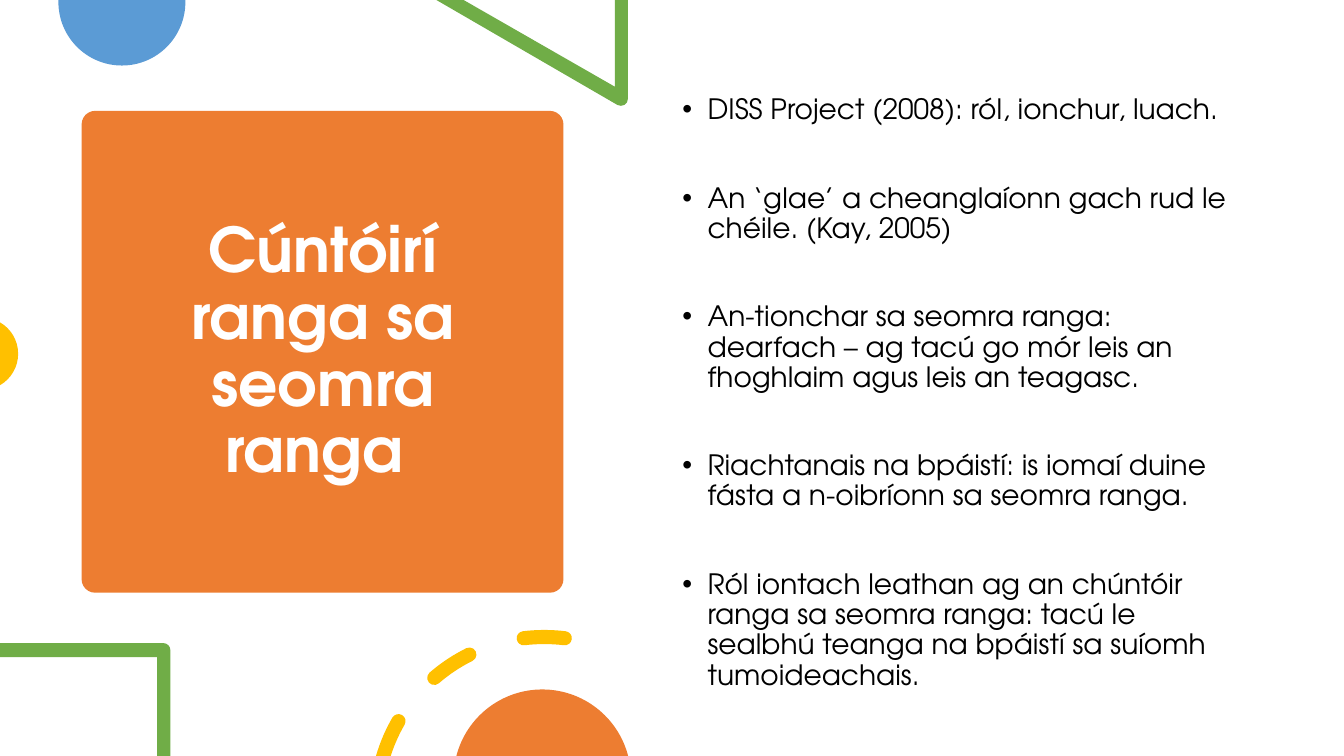
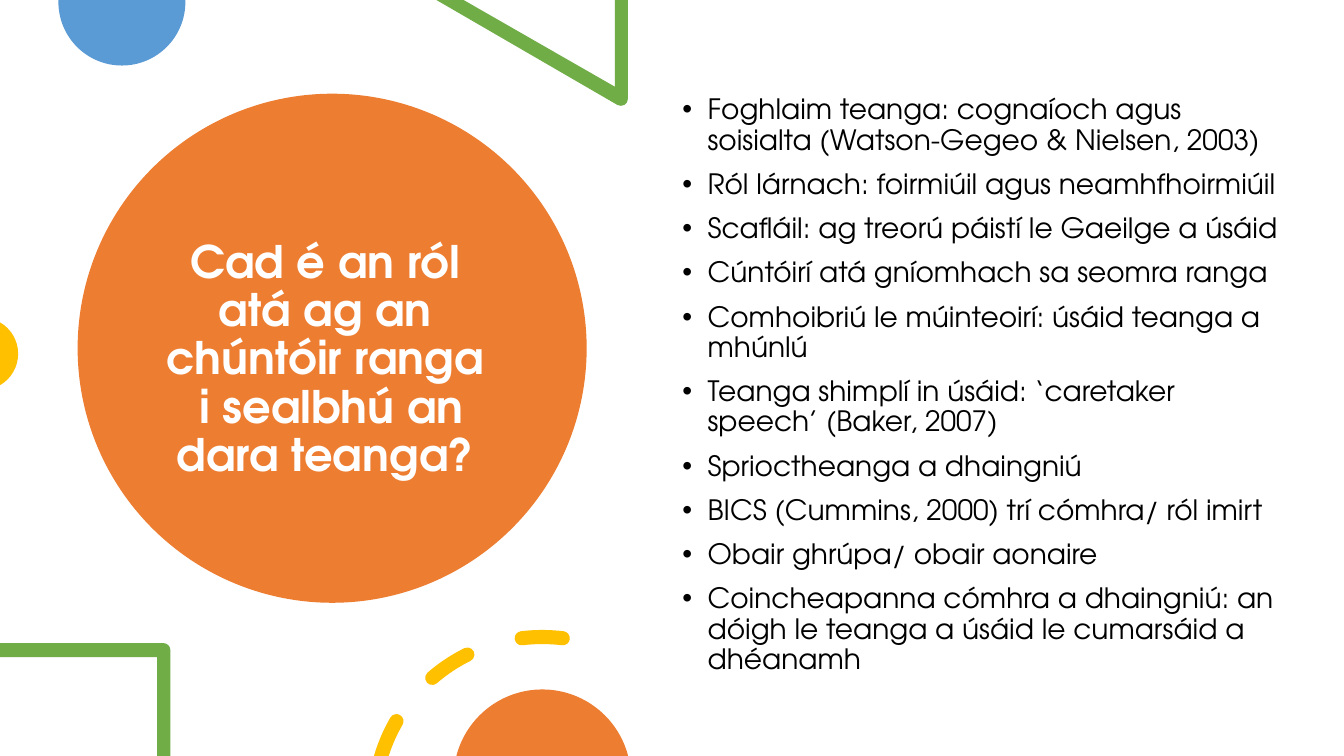
from math import asin, ceil, cos, degrees, radians, sin, tan

from lxml.etree import SubElement
from pptx import Presentation
from pptx.dml.color import RGBColor
from pptx.enum.shapes import MSO_SHAPE
from pptx.enum.text import MSO_ANCHOR, MSO_AUTO_SIZE, PP_ALIGN
from pptx.oxml.ns import qn
from pptx.util import Inches, Pt

FONT = "TeX Gyre Adventor"
ORANGE, BLUE, GREEN, YELLOW = "ED7D31", "5B9BD5", "70AD47", "FFC000"
WHITE, BLACK = "FFFFFF", "000000"
WIDTH, HEIGHT = 40 / 3, 7.5
TITLE_AND_CONTENT = 1
CORNER = 0.07


def color(hex_string):
    return RGBColor.from_string(hex_string)


def paint(shape, fill):
    shape.fill.solid()
    shape.fill.fore_color.rgb = color(fill)
    shape.line.fill.background()
    shape.shadow.inherit = False


def place(shape, box):
    shape.left, shape.top, shape.width, shape.height = map(Inches, box)


# Outlines: a contour is a list of steps; a step is one point (straight line)
# or three points (two controls and the end of a curve)

def arc(center_x, center_y, radius, start, end):
    """Steps along an arc; angles in degrees, clockwise from the right."""
    count = ceil(abs(end - start) / 90)
    sweep = radians(end - start) / count
    pull = 4 / 3 * tan(sweep / 4)

    def point(angle, along=0):
        return (center_x + radius * (cos(angle) - along * sin(angle)),
                center_y + radius * (sin(angle) + along * cos(angle)))

    angles = [radians(start) + sweep * index for index in range(count + 1)]
    curves = [[point(first, pull), point(last, -pull), point(last)]
              for first, last in zip(angles, angles[1:])]
    return [[point(angles[0])]] + curves


def line(*points):
    return [[point] for point in points]


def dash(center_x, center_y, radius, start, end, half=0.07):
    """A curved dash with round ends; without a start it is cut by the slide edge."""
    outer, inner = radius + half, radius - half

    def begin(edge_radius):
        if start is None:
            return 180 + degrees(asin((center_y - HEIGHT) / edge_radius))
        return start

    def cap(angle, turn):
        x = center_x + radius * cos(radians(angle))
        y = center_y + radius * sin(radians(angle))
        return arc(x, y, half, angle + turn, angle + turn + 180)[1:]

    steps = arc(center_x, center_y, outer, begin(outer), end) + cap(end, 0)
    steps += arc(center_x, center_y, inner, end, begin(inner))[1:]
    return steps if start is None else steps + cap(start, 180)


def bend(shape, steps):
    """Turn the straight lines of each three-point step into one curve."""
    lines = shape._element.iter(qn("a:lnTo"))
    lines = iter(list(lines))
    for step in steps:
        group = [next(lines) for _ in step]
        if len(group) == 3:
            curve = group[0].makeelement(qn("a:cubicBezTo"))
            group[0].addprevious(curve)
            for straight in group:
                curve.append(straight[0])
                straight.getparent().remove(straight)


def add_outline(slide, fill, *contours):
    builder = None
    for contour in contours:
        points = [(Inches(x), Inches(y)) for step in contour for x, y in step]
        if builder is None:
            builder = slide.shapes.build_freeform(*points[0])
        else:
            builder.move_to(*points[0])
        builder.add_line_segments(points[1:], close=True)
    shape = builder.convert_to_shape()
    bend(shape, [step for contour in contours for step in contour[1:]])
    paint(shape, fill)


# Decorations around the slide edges

def add_decorations(slide, dashes_x):
    add_outline(slide, BLUE, line((1.84, 0), (0.58, 0)) + arc(1.21, 0.02, 0.63, 180, 0))
    add_outline(slide, GREEN, line((6.23, 0), (6.1, 0), (6.1, 0.86), (4.6, 0), (4.33, 0))
                + arc(6.16, 0.98, CORNER, 120, 0))
    add_outline(slide, YELLOW, arc(-0.18, 3.51, 0.36, -60, 60))
    add_outline(slide, GREEN, line((0, 6.38)) + arc(1.62, 6.45, CORNER, -90, 0)
                + line((1.69, HEIGHT), (1.56, HEIGHT), (1.56, 6.52), (0, 6.52)))
    spans = [(None, 210), (229.2, 243.6), (263, 277)]
    add_outline(slide, YELLOW, *[dash(dashes_x, 7.99, 1.67, *span) for span in spans])
    add_outline(slide, ORANGE, arc(5.38, 7.72, 0.88, 194.5, 345.5))


# Title panel on the left

def add_panel(slide, kind, box, corner=None):
    panel = slide.shapes.add_shape(kind, *map(Inches, box))
    if corner is not None:
        panel.adjustments[0] = corner
    paint(panel, ORANGE)
    slide.shapes._spTree.insert(2, panel._element)  # behind the title


def format_runs(paragraph, size, text_color, bold=False):
    for run in paragraph.runs:
        run.font.name = FONT
        run.font.size = Pt(size)
        run.font.bold = bold
        run.font.color.rgb = color(text_color)


def fill_title(title, box, text, size):
    place(title, box)
    frame = title.text_frame
    frame.auto_size = MSO_AUTO_SIZE.NONE
    frame.vertical_anchor = MSO_ANCHOR.MIDDLE
    paragraph = frame.paragraphs[0]
    paragraph.text = text
    paragraph.alignment = PP_ALIGN.CENTER
    paragraph.line_spacing = 0.9
    format_runs(paragraph, size, WHITE, bold=True)


# Bullet list on the right

def add_bullet(paragraph):
    properties = paragraph._p.get_or_add_pPr()
    properties.set("marL", str(Inches(0.25)))
    properties.set("indent", str(-Inches(0.25)))
    SubElement(properties, qn("a:buFont")).set("typeface", "Arial")
    SubElement(properties, qn("a:buChar")).set("char", "•")


def fill_list(body, box, items, gap):
    place(body, box)
    frame = body.text_frame
    frame.text = "\n".join(items)
    frame.auto_size = MSO_AUTO_SIZE.NONE
    frame.vertical_anchor = MSO_ANCHOR.TOP
    for index, paragraph in enumerate(frame.paragraphs):
        paragraph.line_spacing = 0.9
        paragraph.space_before = Pt(gap if index else 10)
        add_bullet(paragraph)
        format_runs(paragraph, 20, BLACK)


def add_topic_slide(presentation, topic):
    layout = presentation.slide_layouts[TITLE_AND_CONTENT]
    slide = presentation.slides.add_slide(layout)
    add_panel(slide, *topic["panel"])
    fill_title(slide.shapes.title, *topic["title"])
    fill_list(slide.placeholders[1], *topic["list"])
    add_decorations(slide, topic["dashes_x"])


TOPICS = [
    {
        "panel": (MSO_SHAPE.ROUNDED_RECTANGLE, (0.81, 1.1, 4.78, 4.78), 0.028),
        "title": ((1.05, 1.22, 4.31, 4.56), "Cúntóirí ranga sa seomra ranga ", 44),
        "list": ((6.67, 0.9, 5.75, 5.35), [
            "DISS Project (2008): ról, ionchur, luach.",
            "An ‘glae’ a cheanglaíonn gach rud le chéile. (Kay, 2005)",
            "An-tionchar sa seomra ranga: dearfach – ag tacú go mór leis an "
            "fhoghlaim agus leis an teagasc.",
            "Riachtanais na bpáistí: is iomaí duine fásta a n-oibríonn sa seomra ranga.",
            "Ról iontach leathan ag an chúntóir ranga sa seomra ranga: tacú le "
            "sealbhú teanga na bpáistí sa suíomh tumoideachais.",
        ], 41.5),
        "dashes_x": 5.4,
    },
    {
        "panel": (MSO_SHAPE.OVAL, (0.77, 0.93, 5.05, 5.05)),
        "title": ((1.52, 1.35, 3.54, 4.45),
                  "Cad é an ról \natá ag an \nchúntóir ranga \n"
                  "i sealbhú an dara teanga? ", 32),
        "list": ((6.67, 0.9, 6.21, 6.09), [
            "Foghlaim teanga: cognaíoch agus soisialta (Watson-Gegeo & Nielsen, 2003)",
            "Ról lárnach: foirmiúil agus neamhfhoirmiúil",
            "Scafláil: ag treorú páistí le Gaeilge a úsáid",
            "Cúntóirí atá gníomhach sa seomra ranga",
            "Comhoibriú le múinteoirí: úsáid teanga a mhúnlú",
            "Teanga shimplí in úsáid: ‘caretaker speech’ (Baker, 2007)",
            "Sprioctheanga a dhaingniú",
            "BICS (Cummins, 2000) trí cómhra/ ról imirt",
            "Obair ghrúpa/ obair aonaire",
            "Coincheapanna cómhra a dhaingniú: an dóigh le teanga a úsáid le "
            "cumarsáid a dhéanamh",
        ], 10),
        "dashes_x": 5.38,
    },
]


def main():
    presentation = Presentation()
    presentation.slide_width = Inches(WIDTH)
    presentation.slide_height = Inches(HEIGHT)
    for topic in TOPICS:
        add_topic_slide(presentation, topic)
    presentation.save("out.pptx")


if __name__ == "__main__":
    main()
